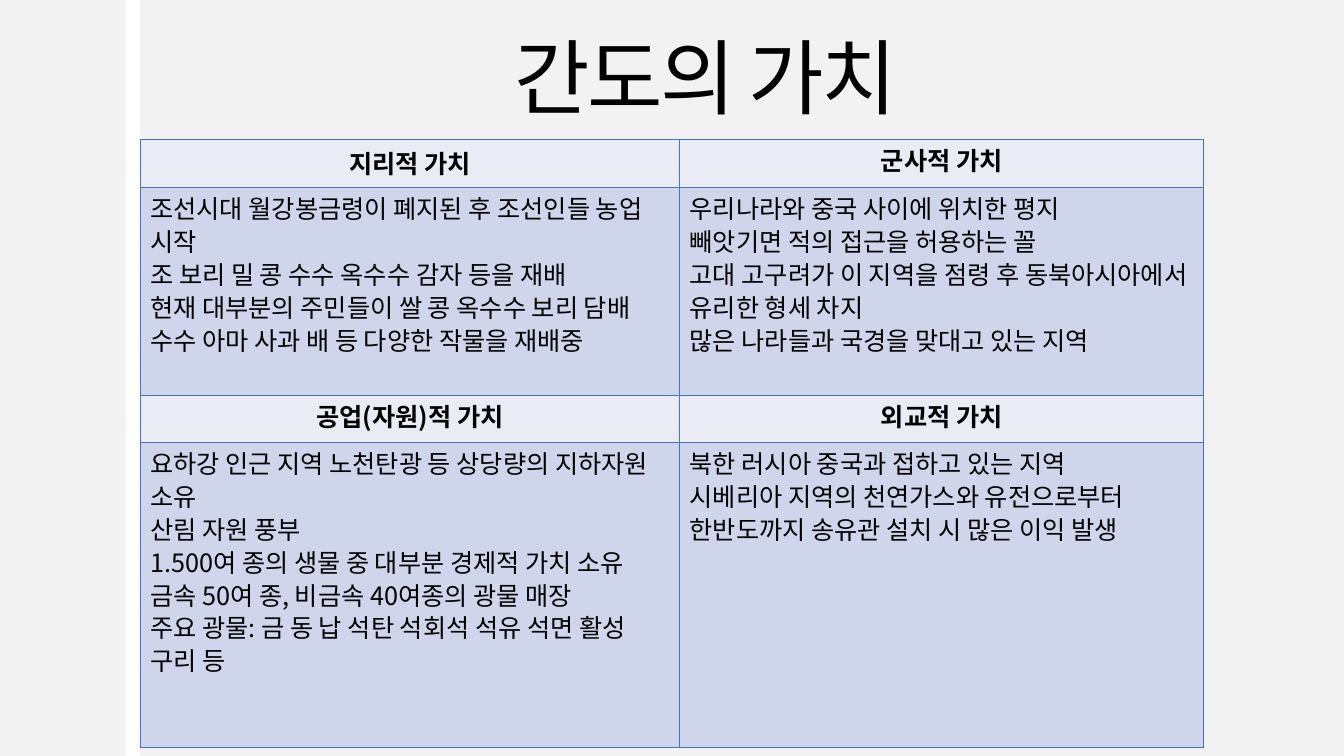
from itertools import product

from lxml.etree import SubElement
from pptx import Presentation
from pptx.dml.color import RGBColor
from pptx.enum.shapes import MSO_SHAPE
from pptx.enum.text import MSO_ANCHOR, PP_ALIGN
from pptx.oxml.ns import qn
from pptx.util import Inches, Pt

FONT = "Noto Sans CJK KR"
COLORS = {"back": "F2F2F2", "bar": "FFFFFF", "text": "000000",
          "head": "E9EBF5", "body": "CFD5EA", "edge": "4472C4"}
COLS = [5.35, 5.2]
ROWS = [0.48, 2.06, 0.47, 3.03]
VALUES = [
    [("지리적 가치", [
        "조선시대 월강봉금령이 폐지된 후 조선인들 농업 시작",
        "조 보리 밀 콩 수수 옥수수 감자 등을 재배",
        "현재 대부분의 주민들이 쌀 콩 옥수수 보리 담배 수수 아마 사과 배 등 다양한 작물을 재배중"]),
     ("군사적 가치", [
         "우리나라와 중국 사이에 위치한 평지",
         "빼앗기면 적의 접근을 허용하는 꼴",
         "고대 고구려가 이 지역을 점령 후 동북아시아에서 유리한 형세 차지",
         "많은 나라들과 국경을 맞대고 있는 지역"])],
    [("공업(자원)적 가치", [
        "요하강 인근 지역 노천탄광 등 상당량의 지하자원 소유",
        "산림 자원 풍부",
        "1.500여 종의 생물 중 대부분 경제적 가치 소유",
        "금속 50여 종, 비금속 40여종의 광물 매장",
        "주요 광물: 금 동 납 석탄 석회석 석유 석면 활성 구리 등"]),
     ("외교적 가치", [
         "북한 러시아 중국과 접하고 있는 지역",
         "시베리아 지역의 천연가스와 유전으로부터 한반도까지 송유관 설치 시 많은 이익 발생"])],
]


def color(name):
    return RGBColor.from_string(COLORS[name])


def paint(fill, name):
    fill.solid()
    fill.fore_color.rgb = color(name)


def add_run(para, text, size, bold=False):
    run = para.add_run()
    run.text = text
    font = run.font
    font.size, font.bold, font.name = Pt(size), bold, FONT
    font.color.rgb = color("text")
    props = run._r.get_or_add_rPr()
    SubElement(props, qn("a:ea"), typeface=FONT)
    return props


def add_bar(slide, left, top, width, height):
    bar = slide.shapes.add_shape(MSO_SHAPE.RECTANGLE, Inches(left), Inches(top),
                                 Inches(width), Inches(height))
    bar.shadow.inherit = False
    paint(bar.fill, "bar")
    bar.line.fill.background()


def add_title(slide, text, left, top, width, height):
    box = slide.shapes.add_textbox(Inches(left), Inches(top),
                                   Inches(width), Inches(height))
    frame = box.text_frame
    frame.word_wrap = True
    frame.vertical_anchor = MSO_ANCHOR.MIDDLE
    para = frame.paragraphs[0]
    para.alignment = PP_ALIGN.CENTER
    add_run(para, text, 58.6).set("spc", "-180")


def add_edges(cell):
    props = cell._tc.get_or_add_tcPr()
    for side in ("lnL", "lnR", "lnT", "lnB"):
        line = SubElement(props, qn(f"a:{side}"), w=str(Pt(1)))
        fill = SubElement(line, qn("a:solidFill"))
        SubElement(fill, qn("a:srgbClr"), val=COLORS["edge"])


def fill_cell(cell, lines, head, space=0.9):
    add_edges(cell)
    paint(cell.fill, "head" if head else "body")
    frame = cell.text_frame
    for index, line in enumerate(lines):
        para = frame.add_paragraph() if index else frame.paragraphs[0]
        para.alignment = PP_ALIGN.CENTER if head else PP_ALIGN.LEFT
        para.line_spacing = space
        add_run(para, line, 18, head)


def add_values(slide, left, top):
    """Place the table of values, each a heading row over a body row."""
    table = slide.shapes.add_table(len(ROWS), len(COLS), Inches(left), Inches(top),
                                   Inches(sum(COLS)), Inches(sum(ROWS))).table
    table.first_row = table.horz_banding = False
    for column, width in zip(table.columns, COLS):
        column.width = Inches(width)
    for row, height in zip(table.rows, ROWS):
        row.height = Inches(height)
    for band, col in product(range(len(VALUES)), range(len(COLS))):
        head, body = VALUES[band][col]
        space = 1.0 if band == col == 0 else 0.9
        fill_cell(table.cell(2 * band, col), [head], True, space)
        fill_cell(table.cell(2 * band + 1, col), body, False)


def main():
    deck = Presentation()
    deck.slide_width, deck.slide_height = Inches(13.33), Inches(7.5)
    slide = deck.slides.add_slide(deck.slide_layouts[6])
    paint(slide.background.fill, "back")
    add_bar(slide, 1.25, 0, 0.14, 7.5)
    add_title(slide, "간도의 가치", 1, 0.13, 12, 1.25)
    add_values(slide, 1.39, 1.38)
    deck.save("out.pptx")


if __name__ == "__main__":
    main()
